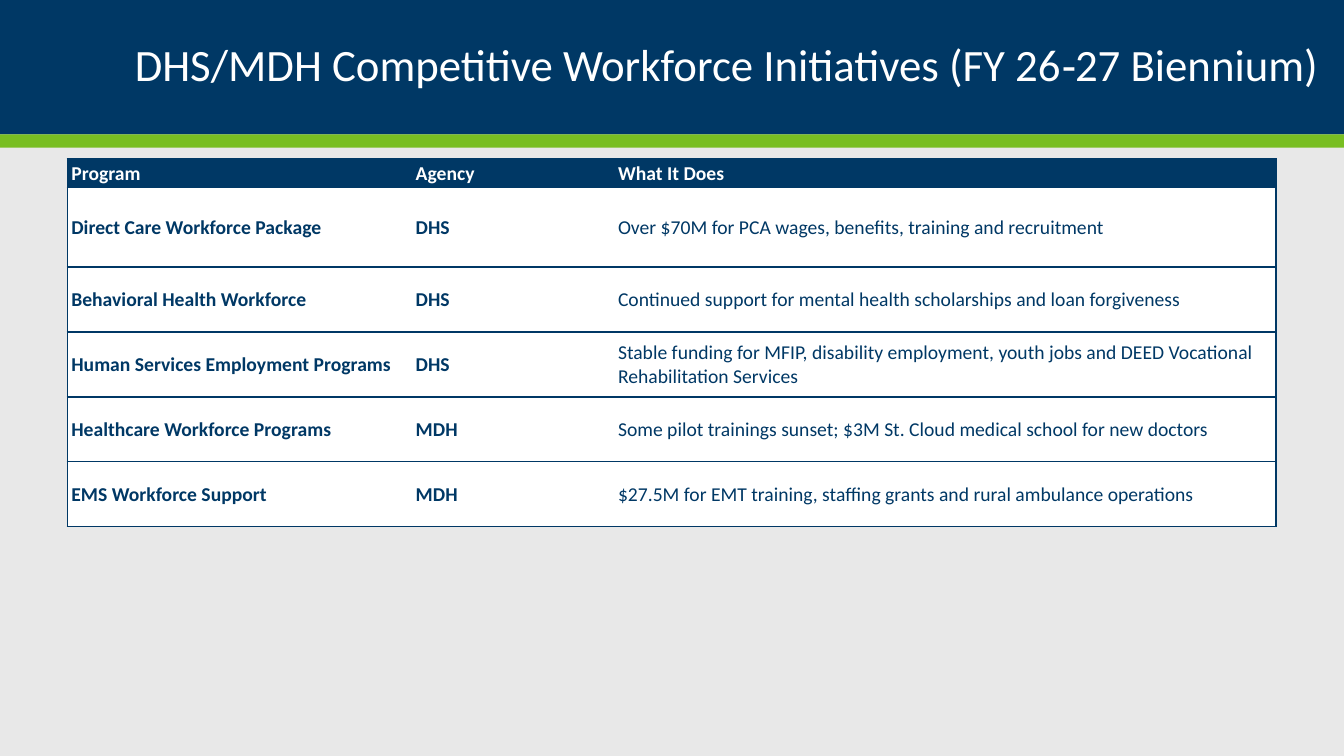
from lxml import etree
from pptx import Presentation
from pptx.dml.color import RGBColor
from pptx.enum import shapes, text
from pptx.oxml import ns
from pptx.util import Pt

NAVY, GREEN, WHITE, GREY = "003865", "78BE21", "FFFFFF", "E8E8E8"


def paint(fill, color):
    fill.solid()
    fill.fore_color.rgb = RGBColor.from_string(color)


def write(frame, words, size, color, bold=False):
    """Put one formatted paragraph in a text frame and return it."""
    para = frame.paragraphs[0]
    run = para.add_run()
    run.text = words
    for key, value in {"name": "Calibri", "size": Pt(size), "bold": bold}.items():
        setattr(run.font, key, value)
    paint(run.font.fill, color)
    return para


deck = Presentation()
deck.slide_width, deck.slide_height = Pt(960), Pt(540)
slide = deck.slides.add_slide(deck.slide_layouts[6])
paint(slide.background.fill, GREY)

# Header bands
for top, height, color in [(0, 96, NAVY), (96, 9.4, GREEN)]:
    band = slide.shapes.add_shape(
        shapes.MSO_SHAPE.RECTANGLE, 0, Pt(top), Pt(960), Pt(height))
    band.shadow.inherit = False
    band.line.fill.background()
    paint(band.fill, color)

# Title
title = slide.shapes.add_textbox(Pt(30), 0, Pt(916), Pt(96)).text_frame
title.word_wrap = True
title.vertical_anchor = text.MSO_ANCHOR.MIDDLE
for side in ("left", "right", "top", "bottom"):
    setattr(title, "margin_" + side, Pt(3.6))
para = write(title, "DHS/MDH Competitive Workforce Initiatives (FY 26‑27 Biennium)", 32, WHITE)
para.alignment = text.PP_ALIGN.RIGHT
para.line_spacing = 0.9

# Program table
rows = [
    ("Program", "Agency", "What It Does"),
    ("Direct Care Workforce Package", "DHS",
     "Over $70M for PCA wages, benefits, training and recruitment"),
    ("Behavioral Health Workforce", "DHS",
     "Continued support for mental health scholarships and loan forgiveness"),
    ("Human Services Employment Programs", "DHS",
     "Stable funding for MFIP, disability employment, youth jobs"
     " and DEED Vocational Rehabilitation Services"),
    ("Healthcare Workforce Programs", "MDH",
     "Some pilot trainings sunset; $3M St. Cloud medical school for new doctors"),
    ("EMS Workforce Support", "MDH",
     "$27.5M for EMT training, staffing grants and rural ambulance operations"),
]
widths = [246, 144.5, 473]
heights = [20.8, 56.6] + [46.4] * 4
table = slide.shapes.add_table(
    len(rows), len(widths), Pt(48), Pt(113.4), Pt(sum(widths)), Pt(sum(heights))).table
for col, width in zip(table.columns, widths):
    col.width = Pt(width)
margins = {"margin_left": 3, "margin_right": 3, "margin_top": 1.5, "margin_bottom": 1.5}

for r, row in enumerate(rows):
    table.rows[r].height = Pt(heights[r])
    for c, words in enumerate(row):
        cell = table.cell(r, c)
        cell.vertical_anchor = text.MSO_ANCHOR.MIDDLE
        for key, value in margins.items():
            setattr(cell, key, Pt(value))
        paint(cell.fill, WHITE if r else NAVY)
        write(cell.text_frame, words, 14, NAVY if r else WHITE, r == 0 or c < 2)

        # Rules across every row, uprights only at the outer edges
        drawn = {"lnL": c == 0, "lnR": c == len(widths) - 1, "lnT": True, "lnB": True}
        props = cell._tc.get_or_add_tcPr()
        for place, (tag, shown) in enumerate(drawn.items()):
            line = etree.Element(ns.qn("a:" + tag), w=str(Pt(1)))
            props.insert(place, line)
            if shown:
                solid = etree.SubElement(line, ns.qn("a:solidFill"))
                etree.SubElement(solid, ns.qn("a:srgbClr"), val=NAVY)
            else:
                etree.SubElement(line, ns.qn("a:noFill"))

deck.save("out.pptx")
